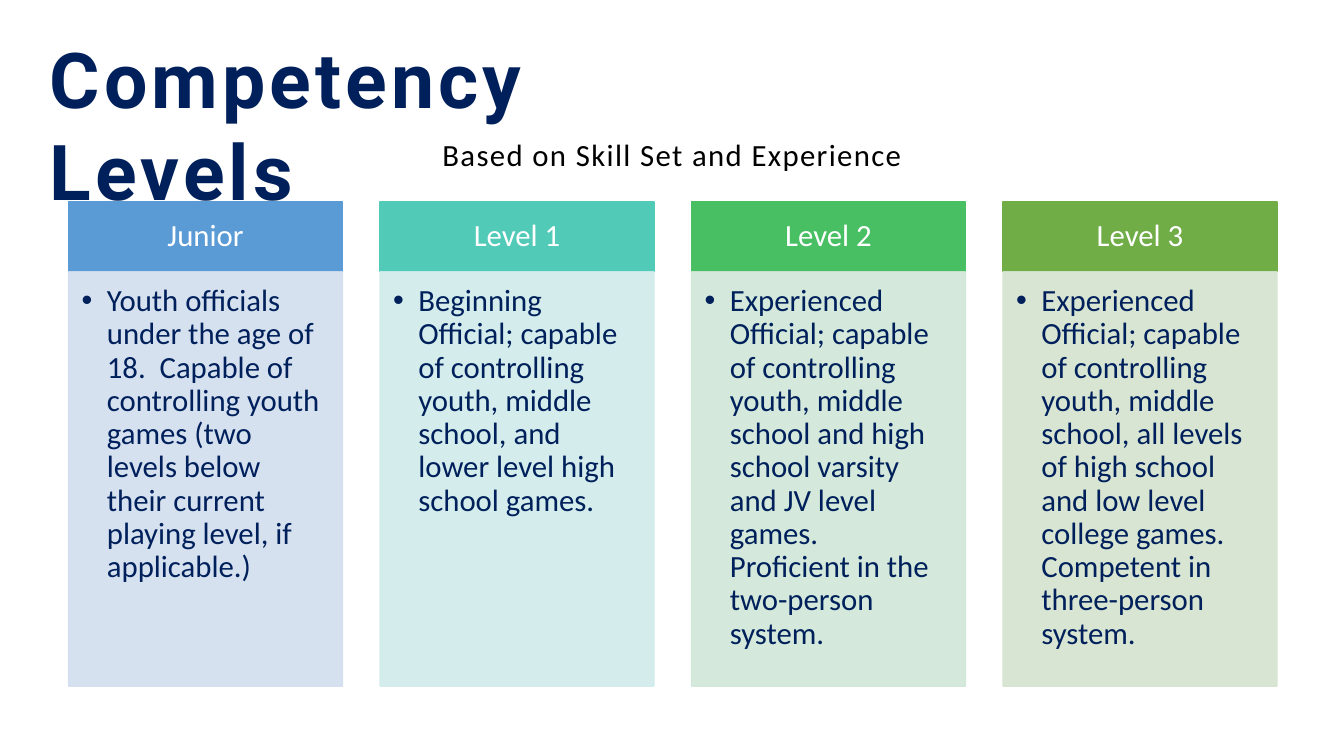
from lxml.etree import SubElement
from pptx import Presentation
from pptx.dml.color import RGBColor
from pptx.enum.shapes import MSO_SHAPE as Shape
from pptx.enum.text import MSO_ANCHOR as Anchor, MSO_AUTO_SIZE as AutoSize, PP_ALIGN as Align
from pptx.oxml.ns import qn
from pptx.util import Cm, Pt

COLORS = {
    "navy": "00205B", "white": "FFFFFF", "black": "000000",
    "blue": "5B9BD5", "pale blue": "D2DEEF",
    "teal": "52CAB8", "pale teal": "D0ECEA",
    "green": "49BF64", "pale green": "D0E7D8",
    "olive": "70AD47", "pale olive": "D5E3CF",
}


def write_text(shape, text, size=22, font="Calibri", color="navy", bold=False, align=Align.LEFT,
               anchor=Anchor.TOP, spacing=0, line_spacing=1.0, margins=(0.25, 0.13, 0.25, 0.13),
               bullet=False, grow=False):
    frame = shape.text_frame
    frame.word_wrap = True
    frame.auto_size = AutoSize.SHAPE_TO_FIT_TEXT if grow else AutoSize.NONE
    frame.vertical_anchor = anchor
    (frame.margin_left, frame.margin_top,
     frame.margin_right, frame.margin_bottom) = [Cm(margin) for margin in margins]
    paragraph = frame.paragraphs[0]
    paragraph.alignment = align
    paragraph.line_spacing = line_spacing
    if bullet:
        properties = paragraph._p.get_or_add_pPr()
        properties.set("marL", str(Cm(0.635)))
        properties.set("indent", str(-Cm(0.635)))
        SubElement(properties, qn("a:buFont")).set("typeface", "Arial")
        SubElement(properties, qn("a:buChar")).set("char", "•")
    run = paragraph.add_run()
    run.text = text
    run.font.size = Pt(size)
    run.font.name = font
    run.font.bold = bold
    run.font.color.rgb = RGBColor.from_string(COLORS[color])
    if spacing:
        run.font._element.set("spc", str(spacing * 100))


def add_panel(left, top, width, height, color, opacity=100):
    panel = slide.shapes.add_shape(Shape.RECTANGLE, Cm(left), Cm(top), Cm(width), Cm(height))
    panel.shadow.inherit = False
    panel.line.width = Pt(1)
    panel.fill.solid()
    for fill in (panel.fill, panel.line.fill):
        fill.solid()
        fill.fore_color.rgb = RGBColor.from_string(COLORS[color])
    if opacity < 100:
        for rgb in panel._element.spPr.iter(qn("a:srgbClr")):
            SubElement(rgb, qn("a:alpha")).set("val", str(opacity * 1000))
    return panel


presentation = Presentation()
presentation.slide_width = Cm(33.87)
presentation.slide_height = Cm(19.05)
slide = presentation.slides.add_slide(presentation.slide_layouts[6])

# Level columns: a coloured header above a pale description
LEVELS = [
    ("Junior", "blue",
     "Youth officials under the age of 18.  Capable of controlling youth games "
     "(two levels below their current playing level, if applicable.)"),
    ("Level 1", "teal",
     "Beginning Official; capable of controlling youth, middle school, "
     "and lower level high school games."),
    ("Level 2", "green",
     "Experienced Official; capable of controlling youth, middle school and high school "
     "varsity and JV level games.  Proficient in the two-person system."),
    ("Level 3", "olive",
     "Experienced Official; capable of controlling youth, middle school, all levels of "
     "high school and low level college games. Competent in three-person system."),
]
FIRST_LEFT, PITCH, WIDTH = 1.73, 7.85, 6.9
HEADER_TOP, HEADER_HEIGHT, BODY_HEIGHT = 5.09, 1.76, 10.44

for index, (name, color, description) in enumerate(LEVELS):
    left = FIRST_LEFT + index * PITCH
    header = add_panel(left, HEADER_TOP, WIDTH, HEADER_HEIGHT, color)
    write_text(header, name, color="white", align=Align.CENTER, anchor=Anchor.MIDDLE,
               line_spacing=0.9, margins=(0.43, 0.25, 0.43, 0.25))
    body = add_panel(left, HEADER_TOP + HEADER_HEIGHT, WIDTH, BODY_HEIGHT, f"pale {color}", opacity=90)
    write_text(body, description, line_spacing=0.9, margins=(0.33, 0.33, 0.43, 0.48), bullet=True)

# Title and subtitle
title = slide.shapes.add_textbox(Cm(1), Cm(0.66), Cm(15.95), Cm(2.62))
write_text(title, "Competency Levels", size=55, font="Roboto", bold=True, spacing=3, grow=True)
subtitle = slide.shapes.add_textbox(Cm(5.79), Cm(3.28), Cm(22.3), Cm(1.19))
write_text(subtitle, "Based on Skill Set and Experience", color="black", align=Align.CENTER,
           spacing=1, grow=True)

presentation.save("out.pptx")
